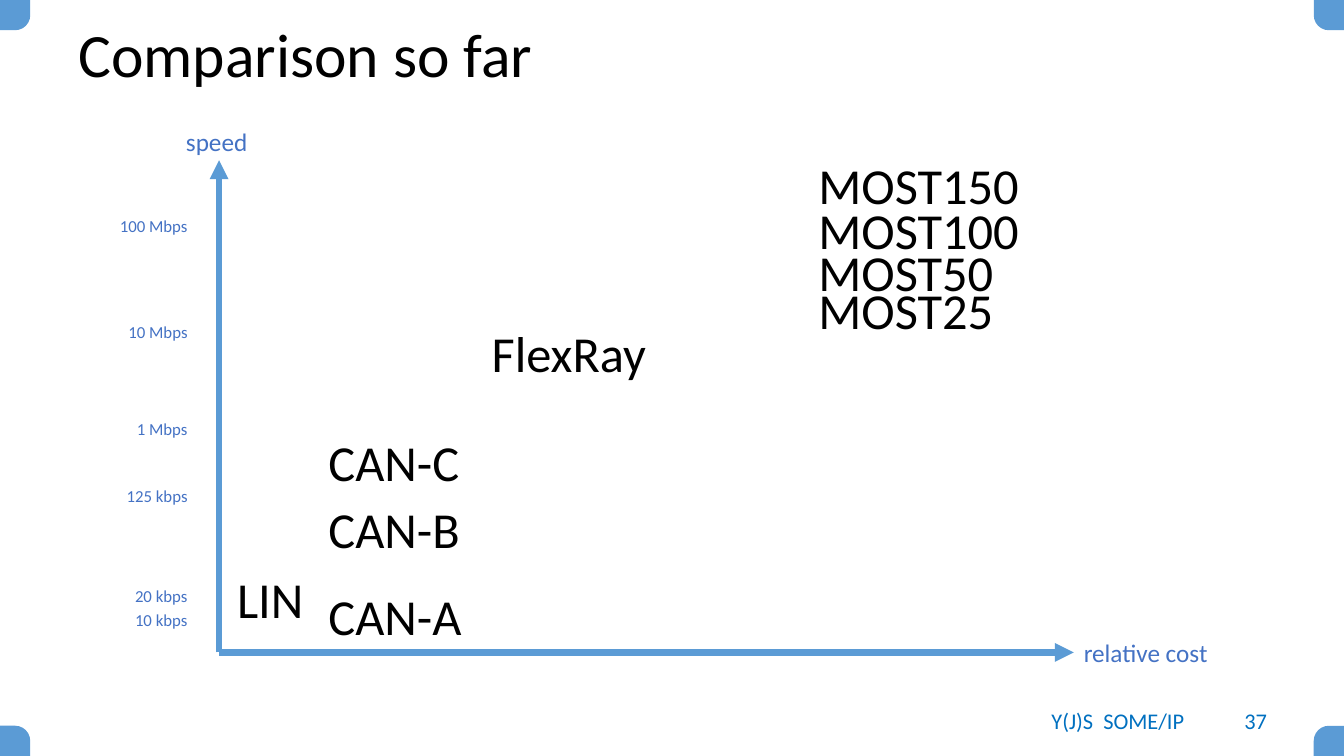
from dataclasses import dataclass

from lxml import etree
from pptx import Presentation
from pptx import util as u
from pptx.dml.color import RGBColor
from pptx.enum import shapes, text
from pptx.oxml import ns


@dataclass(frozen=True)
class Theme:
    font: str = "Calibri"
    ink: str = "000000"
    line: str = "5B9BD5"
    axis: str = "4472C4"
    foot: str = "0070C0"
    title: int = 44
    bus: int = 36
    name: int = 18
    page: int = 16
    tick: int = 12
    rule: float = 4.5


T = Theme()
WIDE, HIGH = u.Inches(13.33), u.Inches(7.5)
LEFT, MID, RIGHT = text.PP_ALIGN.LEFT, text.PP_ALIGN.CENTER, text.PP_ALIGN.RIGHT
TOP, HALF = text.MSO_ANCHOR.TOP, text.MSO_ANCHOR.MIDDLE
ZERO, BASE = 16.3, 86.3

BUSES = [
    ("LIN", 16.9, 74.5, 8.3),
    ("CAN-A", 23.7, 76.8, 11.4),
    ("CAN-B", 23.7, 65.2, 11.4),
    ("CAN-C", 23.7, 56.4, 11.4),
    ("FlexRay", 35.85, 42, 13.65),
    ("MOST25", 60.15, 36.3, 16.65),
    ("MOST50", 60.15, 31.3, 16.65),
    ("MOST100", 60.15, 25.7, 16.65),
    ("MOST150", 60.15, 19.7, 16.65),
]
TICKS = [
    ("10 kbps", 80, 5.7),
    ("20 kbps", 76.8, 5.7),
    ("125 kbps", 63.6, 6.3),
    ("1 Mbps", 54.8, 5.7),
    ("10 Mbps", 41.9, 6.2),
    ("100 Mbps", 27.9, 7.2),
]
EDGE = 14.7


def col(n):
    return round(WIDE * n / 100)


def row(n):
    return round(HIGH * n / 100)


def label(slide, words, box, size, color, align=LEFT, anchor=TOP):
    x, y, w, h = box
    frame = slide.shapes.add_textbox(col(x), row(y), col(w), row(h)).text_frame
    frame.word_wrap = True
    frame.vertical_anchor = anchor
    para = frame.paragraphs[0]
    para.text = words
    para.alignment = align
    para.font.name = T.font
    para.font.size = u.Pt(size)
    para.font.color.rgb = RGBColor.from_string(color)
    return para


def arrow(slide, x1, y1, x2, y2):
    axis = slide.shapes.add_connector(
        shapes.MSO_CONNECTOR.STRAIGHT, col(x1), row(y1), col(x2), row(y2))
    axis.line.color.rgb = RGBColor.from_string(T.line)
    axis.line.width = u.Pt(T.rule)
    ln = axis.line._get_or_add_ln()
    etree.SubElement(ln, ns.qn("a:tailEnd"), type="triangle")
    etree.SubElement(axis._element.spPr, ns.qn("a:effectLst"))


def corner(slide, x, y, turn):
    side = u.Inches(0.3)
    tab = slide.shapes.add_shape(
        shapes.MSO_SHAPE.ROUND_1_RECTANGLE,
        x * (WIDE - side), y * (HIGH - side), side, side)
    tab.adjustments[0] = 0.5
    tab.rotation = turn
    tab.shadow.inherit = False
    tab.fill.solid()
    tab.fill.fore_color.rgb = RGBColor.from_string(T.line)
    tab.line.fill.background()


def main():
    deck = Presentation()
    deck.slide_width, deck.slide_height = WIDE, HIGH
    slide = deck.slides.add_slide(deck.slide_layouts[6])

    for x, y, turn in [(0, 0, 90), (1, 0, 180), (1, 1, 270), (0, 1, 0)]:
        corner(slide, x, y, turn)

    title = label(slide, "Comparison so far", (5.1, 2.8, 89.9, 9.6),
                  T.title, T.ink, anchor=HALF)
    title.line_spacing = 0.9
    label(slide, "Y(J)S  SOME/IP", (75.75, 92.7, 14.85, 5.3),
          T.page, T.foot, MID, HALF)
    label(slide, "37", (89.9, 92.7, 5.1, 5.3), T.page, T.foot, RIGHT, HALF)

    arrow(slide, ZERO, BASE, ZERO, 21.2)
    arrow(slide, ZERO, BASE, 79.9, BASE)
    label(slide, "speed", (13.1, 16.1, 6.15, 5.3), T.name, T.axis)
    label(slide, "relative cost", (79.9, 83.6, 13.65, 5.3), T.name, T.axis)

    for words, y, w in TICKS:
        label(slide, words, (EDGE - w, y, w, 4), T.tick, T.axis, RIGHT)
    for words, x, y, w in BUSES:
        label(slide, words, (x, y, w, 9.5), T.bus, T.ink)

    deck.save("out.pptx")


if __name__ == "__main__":
    main()
